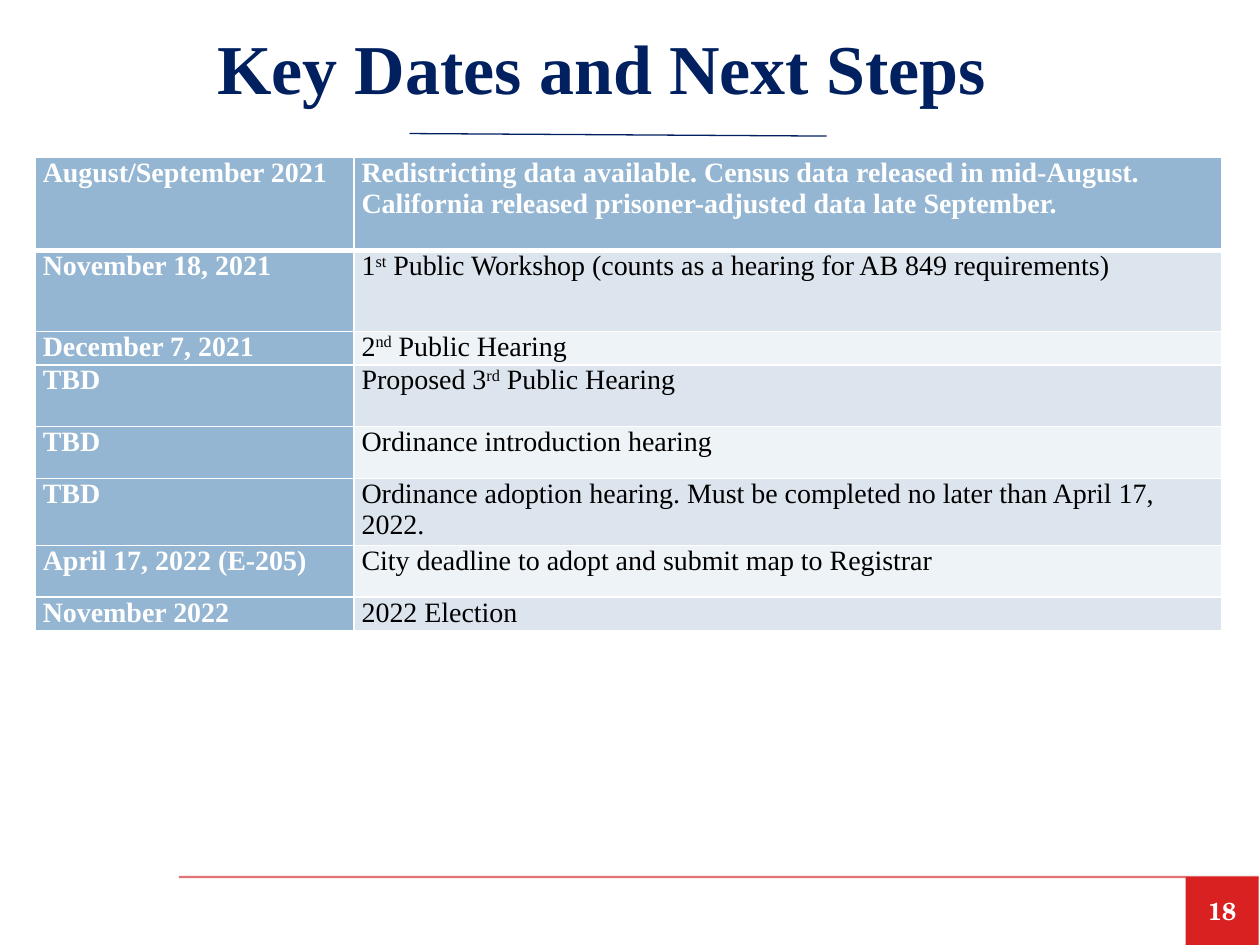
from lxml import etree
from pptx import Presentation
from pptx.dml.color import RGBColor
from pptx.enum.shapes import MSO_CONNECTOR, MSO_SHAPE
from pptx.enum.text import MSO_ANCHOR, PP_ALIGN
from pptx.oxml.ns import qn
from pptx.util import Inches, Pt

LINE = MSO_CONNECTOR.STRAIGHT
RECT = MSO_SHAPE.RECTANGLE
MIDDLE, TOP = MSO_ANCHOR.MIDDLE, MSO_ANCHOR.TOP
CENTER, LEFT = PP_ALIGN.CENTER, PP_ALIGN.LEFT

COLORS = {
    "navy": "002060", "rule": "C80000", "red": "D92121", "white": "FFFFFF",
    "black": "000000", "blue": "94B6D2", "band": "DCE5EE", "light": "EEF3F7",
}


def rgb(name):
    return RGBColor.from_string(COLORS[name])


def set_text(tf, text, size=16, color="black", bold=False,
             font="Times New Roman", align=LEFT, anchor=MIDDLE):
    """Write one paragraph; text between ^ marks is superscript."""
    tf.word_wrap = True
    tf.vertical_anchor = anchor
    p = tf.paragraphs[0]
    p.alignment = align
    for i, part in enumerate(text.split("^")):
        r = p.add_run()
        r.text = part
        r.font.name, r.font.size, r.font.bold = font, Pt(size), bold
        r.font.color.rgb = rgb(color)
        if i % 2:
            r._r.get_or_add_rPr().set("baseline", "30000")


prs = Presentation()
prs.slide_width, prs.slide_height = Inches(10), Inches(7.5)
s = prs.slides.add_slide(prs.slide_layouts[6])

# Rules: footer line (55% opaque) and title underline
for x1, y1, x2, y2, color, width, opacity in [
    (1.42, 6.96, 9.99, 6.96, "rule", 1.25, 55),
    (3.25, 1.06, 6.56, 1.08, "navy", 0.75, 100),
]:
    line = s.shapes.add_connector(LINE, Inches(x1), Inches(y1), Inches(x2), Inches(y2))
    line.line.color.rgb = rgb(color)
    line.line.width = Pt(width)
    spPr = line._element.spPr
    etree.SubElement(spPr, qn("a:effectLst"))
    if opacity < 100:
        clr = spPr.find(".//" + qn("a:srgbClr"))
        etree.SubElement(clr, qn("a:alpha"), val=str(opacity * 1000))

# Title
title = s.shapes.add_textbox(Inches(0.15), Inches(-0.01), Inches(9.25), Inches(1.08))
set_text(title.text_frame, "Key Dates and Next Steps", size=40, color="navy",
         bold=True, align=CENTER)

# Page number
sp = s.shapes.add_shape(RECT, Inches(9.41), Inches(6.96), Inches(0.58), Inches(0.54))
sp.shadow.inherit = False
sp.fill.solid()
sp.fill.fore_color.rgb = rgb("red")
sp.line.fill.background()
set_text(sp.text_frame, "18", size=14, color="white", bold=True,
         font="TeX Gyre Schola", align=CENTER)

# Schedule table: row height, date, step
rows = [
    (0.74, "August/September 2021\u00a0",
     "Redistricting data available. Census data released in mid-August. "
     "California released prisoner-adjusted data late September."),
    (0.64, "November 18, 2021",
     "1^st^ Public Workshop (counts as a hearing for AB 849 requirements)"),
    (0.25, "December 7, 2021", "2^nd^ Public Hearing"),
    (0.49, "TBD", "Proposed 3^rd^ Public Hearing"),
    (0.41, "TBD", "Ordinance introduction hearing"),
    (0.49, "TBD",
     "Ordinance adoption hearing. Must be completed no later than April 17, 2022."),
    (0.41, "April 17, 2022 (E-205)", "City deadline to adopt and submit map to Registrar"),
    (0.25, "November 2022", "2022 Election"),
]
height = sum(row[0] for row in rows)
table = s.shapes.add_table(len(rows), 2, Inches(0.28), Inches(1.25),
                           Inches(9.42), Inches(height)).table
table.columns[0].width, table.columns[1].width = Inches(2.53), Inches(6.89)

for i, (row_height, *texts) in enumerate(rows):
    table.rows[i].height = Inches(row_height)
    for j, text in enumerate(texts):
        cell = table.cell(i, j)
        cell.margin_left = cell.margin_right = Inches(0.06)
        cell.margin_top = cell.margin_bottom = 0
        cell.vertical_anchor = TOP
        heading = i == 0 or j == 0

        # White borders, thicker under the header row
        tcPr = cell._tc.get_or_add_tcPr()
        for side in "LRTB":
            thick = (i, side) in [(0, "B"), (1, "T")]
            ln = etree.SubElement(tcPr, qn("a:ln" + side), w=str(Pt(3 if thick else 1)))
            fill = etree.SubElement(ln, qn("a:solidFill"))
            etree.SubElement(fill, qn("a:srgbClr"), val=COLORS["white"])

        cell.fill.solid()
        cell.fill.fore_color.rgb = rgb("blue" if heading else "band" if i % 2 else "light")
        set_text(cell.text_frame, text, color="white" if heading else "black",
                 bold=heading, anchor=None)

prs.save("out.pptx")
